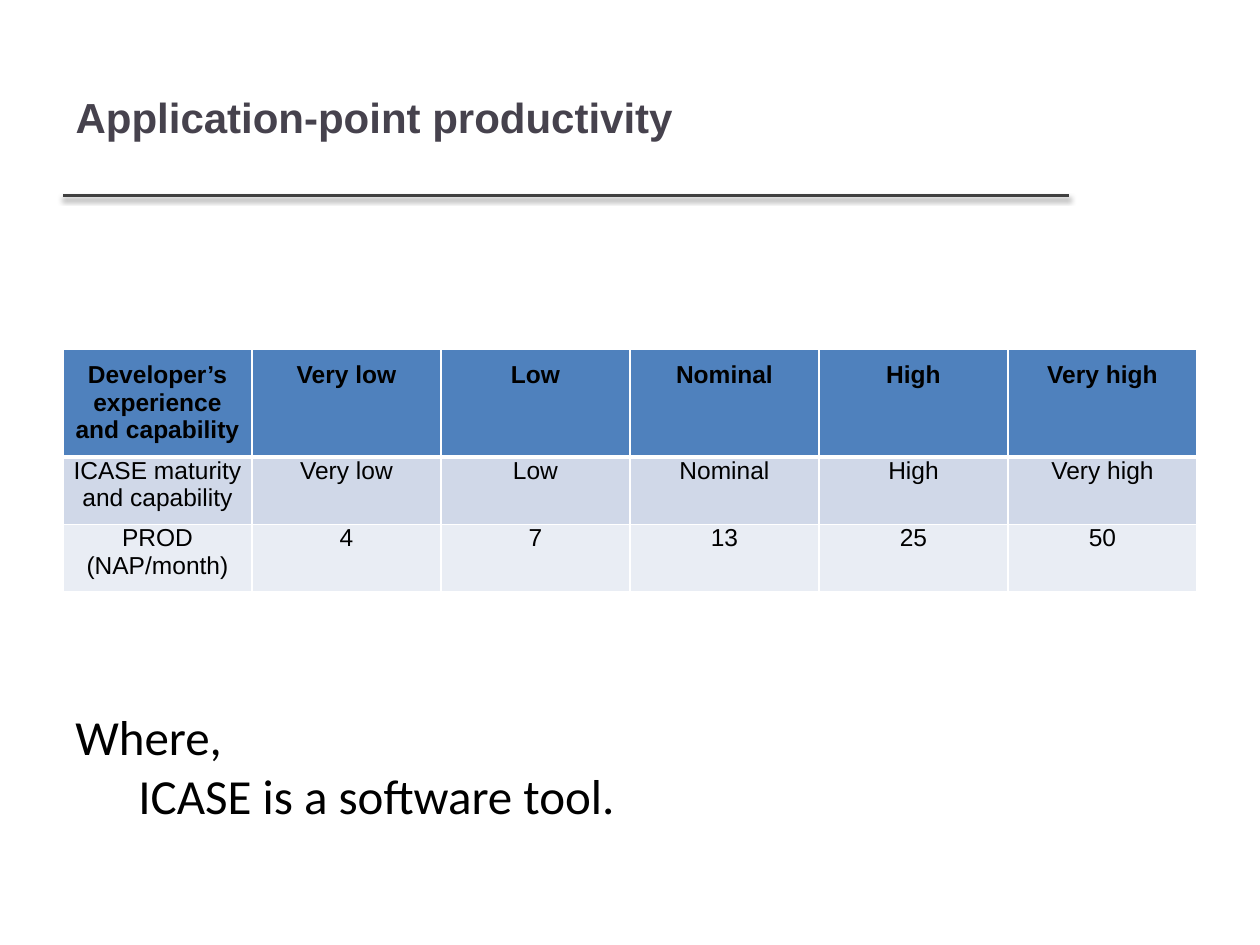
from dataclasses import dataclass

from lxml import etree
from pptx import Presentation
from pptx.dml.color import RGBColor
from pptx.enum.shapes import MSO_CONNECTOR
from pptx.enum.text import MSO_ANCHOR, MSO_AUTO_SIZE, PP_ALIGN
from pptx.oxml import parse_xml
from pptx.oxml.ns import nsdecls, qn
from pptx.util import Cm, Pt

STRAIGHT = MSO_CONNECTOR.STRAIGHT
MIDDLE = MSO_ANCHOR.MIDDLE
GROW = MSO_AUTO_SIZE.SHAPE_TO_FIT_TEXT
LEFT, CENTER = PP_ALIGN.LEFT, PP_ALIGN.CENTER

TITLE_ONLY_LAYOUT = 5
MARGIN = Cm(1.27)
CONTENT_WIDTH = Cm(20.28)
RULE_Y = Cm(3.94)
COLUMN_WIDTH = Cm(3.81)
CELL_SIDE_INSET = Cm(0.2)
CELL_BOTTOM_INSET = Cm(0.25)


@dataclass
class TableRow:
    texts: list[str]
    fill: str
    height: float  # cm
    top_inset: float = 0  # cm
    bold: bool = False
    top_border: int = 1  # pt
    bottom_border: int = 1  # pt


TABLE_ROWS = [
    TableRow(["Developer’s experience and capability", "Very low", "Low",
              "Nominal", "High", "Very high"],
             "4F81BD", 2.17, top_inset=0.25, bold=True, bottom_border=3),
    TableRow(["ICASE maturity and capability", "Very low", "Low",
              "Nominal", "High", "Very high"],
             "D0D8E8", 1.35, top_border=3),
    TableRow(["PROD (NAP/month)", "4", "7", "13", "25", "50"],
             "E9EDF4", 1.35),
]


def color(hex_value: str) -> RGBColor:
    return RGBColor.from_string(hex_value)


def format_paragraph(paragraph, font_name: str, size: int, hex_value: str,
                     bold: bool = False, alignment=LEFT) -> None:
    paragraph.alignment = alignment
    font = paragraph.font
    font.name, font.size, font.bold = font_name, Pt(size), bold
    font.color.rgb = color(hex_value)


def add_title_rule(slide) -> None:
    rule = slide.shapes.add_connector(
        STRAIGHT, MARGIN, RULE_Y, MARGIN + CONTENT_WIDTH, RULE_Y)
    rule.line.color.rgb = color("404040")
    rule.line.width = Pt(2)
    rule._element.spPr.append(parse_xml(
        f'<a:effectLst {nsdecls("a")}>'
        '<a:outerShdw blurRad="40000" dist="20000" dir="5400000" rotWithShape="0">'
        '<a:srgbClr val="000000"><a:alpha val="38000"/></a:srgbClr>'
        '</a:outerShdw></a:effectLst>'))


def set_title(slide, text: str) -> None:
    title = slide.shapes.title
    title.left, title.top = MARGIN, Cm(0.76)
    title.width, title.height = CONTENT_WIDTH, Cm(3.18)
    title.text_frame.text = text
    title.text_frame.vertical_anchor = MIDDLE
    format_paragraph(title.text_frame.paragraphs[0], "Arial", 24, "46424D", bold=True)


def add_borders(cell, row: TableRow) -> None:
    cell_properties = cell._tc.get_or_add_tcPr()
    widths = {"lnL": 1, "lnR": 1, "lnT": row.top_border, "lnB": row.bottom_border}
    for side, width in widths.items():
        border = etree.SubElement(cell_properties, qn(f"a:{side}"), w=str(Pt(width)))
        fill = etree.SubElement(border, qn("a:solidFill"))
        etree.SubElement(fill, qn("a:srgbClr"), val="FFFFFF")


def fill_cell(cell, text: str, row: TableRow) -> None:
    add_borders(cell, row)
    cell.fill.solid()
    cell.fill.fore_color.rgb = color(row.fill)
    cell.margin_left = cell.margin_right = CELL_SIDE_INSET
    cell.margin_top, cell.margin_bottom = Cm(row.top_inset), CELL_BOTTOM_INSET
    cell.text = text
    format_paragraph(cell.text_frame.paragraphs[0], "Arial", 14, "000000",
                     row.bold, CENTER)


def add_productivity_table(slide, rows: list[TableRow]) -> None:
    column_count = len(rows[0].texts)
    height = Cm(sum(row.height for row in rows))
    table = slide.shapes.add_table(len(rows), column_count, MARGIN, Cm(7.04),
                                   COLUMN_WIDTH * column_count, height).table
    for table_row, row in zip(table.rows, rows):
        table_row.height = Cm(row.height)
        for cell, text in zip(table_row.cells, row.texts):
            fill_cell(cell, text, row)


def add_note(slide) -> None:
    note = slide.shapes.add_textbox(MARGIN, Cm(14.12), CONTENT_WIDTH, Cm(2.64))
    frame = note.text_frame
    frame.word_wrap = True
    frame.auto_size = GROW
    frame.text = "Where,\nICASE is a software tool."
    for paragraph in frame.paragraphs:
        format_paragraph(paragraph, "Calibri", 28, "000000")
    # The definition is set in under its lead-in
    frame.paragraphs[1]._p.get_or_add_pPr().set("marL", str(Cm(1.27)))


def main() -> None:
    presentation = Presentation()
    presentation.slide_width, presentation.slide_height = Cm(25.4), Cm(19.05)
    slide = presentation.slides.add_slide(
        presentation.slide_layouts[TITLE_ONLY_LAYOUT])

    # Heading
    add_title_rule(slide)
    set_title(slide, "Application-point productivity")

    # Table and its explanation
    add_productivity_table(slide, TABLE_ROWS)
    add_note(slide)

    presentation.save("out.pptx")


if __name__ == "__main__":
    main()
